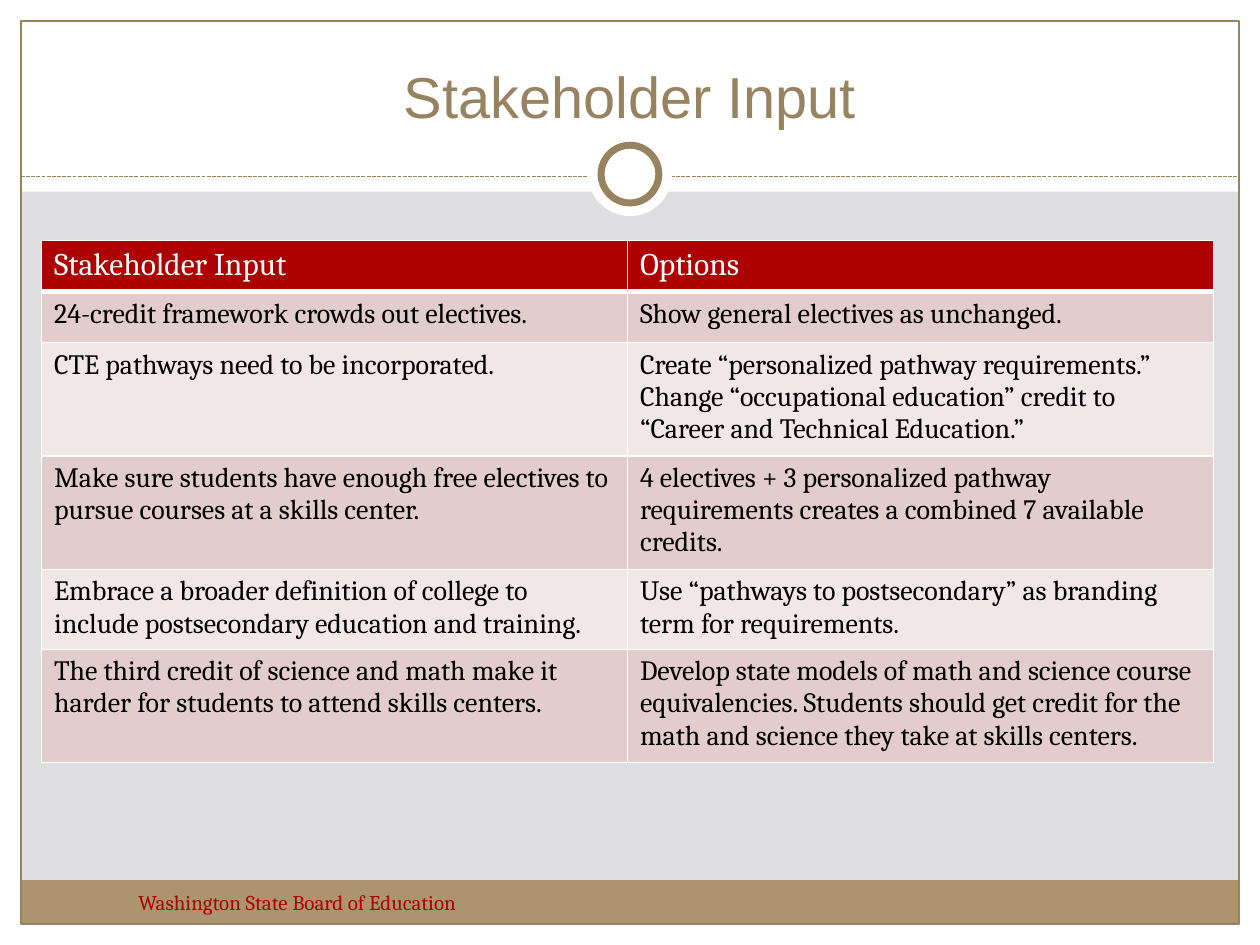
from lxml.etree import SubElement
from pptx import Presentation
from pptx.dml.color import RGBColor
from pptx.enum.dml import MSO_LINE
from pptx.enum.shapes import MSO_CONNECTOR, MSO_SHAPE
from pptx.enum.text import MSO_ANCHOR, PP_ALIGN
from pptx.oxml.ns import qn
from pptx.util import Pt

TITLE = "Stakeholder Input"
FOOTER = "Washington State Board of Education"
ROWS = [
    ("Stakeholder Input", "Options"),
    ("24-credit framework crowds out electives.",
     "Show general electives as unchanged."),
    ("CTE pathways need to be incorporated.",
     "Create “personalized pathway requirements.” Change “occupational education” "
     "credit to “Career and Technical Education.”"),
    ("Make sure students have enough free electives to pursue courses at a skills center.",
     "4 electives + 3 personalized pathway requirements creates a combined 7 available credits."),
    ("Embrace a broader definition of college to include postsecondary education and training.",
     "Use “pathways to postsecondary” as branding term for requirements."),
    ("The third credit of science and math make it harder for students to attend skills centers.",
     "Develop state models of math and science course equivalencies. Students should get "
     "credit for the math and science they take at skills centers."),
]

W, H = 720, 540
EDGE = 12
HEADER_H = 109.5
RULE_Y = 101
RING_Y = 99.5
WHITE, TAN, BAND, RED = "FFFFFF", "988361", "AC956E", "AD0101"
STRIPES = ("F1E7E7", "E3CCCC")
TABLE_X, TABLE_Y, COL_W, ROW_H = 23.75, 137.4, 334.8, 29.2


def rgb(color):
    return RGBColor.from_string(color)


def add_shape(kind, x, y, w, h, fill=None, line=None, line_w=0.75):
    s = shapes.add_shape(kind, Pt(x), Pt(y), Pt(w), Pt(h))
    s.shadow.inherit = False
    if fill:
        s.fill.solid()
        s.fill.fore_color.rgb = rgb(fill)
    else:
        s.fill.background()
    if line:
        s.line.color.rgb = rgb(line)
        s.line.width = Pt(line_w)
    else:
        s.line.fill.background()


def add_circle(diameter, **style):
    """Draw a circle centred on the header rule."""
    r = diameter / 2
    add_shape(MSO_SHAPE.OVAL, W / 2 - r, RING_Y - r, diameter, diameter, **style)


def style_text(tf, size, font, color):
    for p in tf.paragraphs:
        for r in p.runs:
            r.font.size = Pt(size)
            r.font.name = font
            r.font.color.rgb = rgb(color)


def add_text(text, x, y, w, h, size, font, color):
    tf = shapes.add_textbox(Pt(x), Pt(y), Pt(w), Pt(h)).text_frame
    tf.word_wrap = True
    tf.text = text
    style_text(tf, size, font, color)
    return tf


def set_borders(cell, widths):
    """Give a cell white borders; they must precede its fill in the XML."""
    tcPr = cell.fill._xPr
    for side, width in widths.items():
        ln = SubElement(tcPr, qn(f"a:ln{side}"), w=str(Pt(width)))
        fill = SubElement(ln, qn("a:solidFill"))
        SubElement(fill, qn("a:srgbClr"), val=WHITE)


prs = Presentation()
prs.slide_width, prs.slide_height = Pt(W), Pt(H)
slide = prs.slides.add_slide(prs.slide_layouts[6])
slide.background.fill.solid()
slide.background.fill.fore_color.rgb = rgb("DEDEE0")
shapes = slide.shapes

# White margins, footer band and frame
for box in ((0, H - EDGE, W, EDGE), (0, 0, W, HEADER_H),
            (0, 0, EDGE, H), (W - EDGE, 0, EDGE, H)):
    add_shape(MSO_SHAPE.RECTANGLE, *box, fill=WHITE)
add_shape(MSO_SHAPE.RECTANGLE, EDGE, 503, W - 2 * EDGE, 25, fill=BAND)
add_shape(MSO_SHAPE.RECTANGLE, EDGE, EDGE, W - 2 * EDGE, H - 2 * EDGE, line=TAN)

# Dashed rule with a ring in the middle
rule = shapes.add_connector(MSO_CONNECTOR.STRAIGHT, Pt(EDGE), Pt(RULE_Y),
                            Pt(W - EDGE), Pt(RULE_Y))
rule.line.color.rgb = rgb(TAN)
rule.line.width = Pt(0.75)
rule.line.dash_style = MSO_LINE.SQUARE_DOT
SubElement(rule._element.spPr, qn("a:effectLst"))
add_circle(48, fill=WHITE)
add_circle(33, fill=WHITE, line=TAN, line_w=4)

title = add_text(TITLE, 24, 18, 672, 60, 33, "Arial", TAN)
title.vertical_anchor = MSO_ANCHOR.BOTTOM
title.paragraphs[0].alignment = PP_ALIGN.CENTER
add_text(FOOTER, 72, 504.7, 282, 28.8, 12, "Cambria", RED)

table = shapes.add_table(len(ROWS), 2, Pt(TABLE_X), Pt(TABLE_Y),
                         Pt(2 * COL_W), Pt(len(ROWS) * ROW_H)).table
for i, row in enumerate(ROWS):
    header = i == 0
    for j, text in enumerate(row):
        cell = table.cell(i, j)
        cell.text = text
        style_text(cell.text_frame, 18 if header else 16, "Cambria",
                   WHITE if header else "000000")
        set_borders(cell, {"L": 1, "R": 1, "T": 1, "B": 3 if header else 1})
        cell.fill.solid()
        cell.fill.fore_color.rgb = rgb(RED if header else STRIPES[i % 2])

prs.save("out.pptx")
